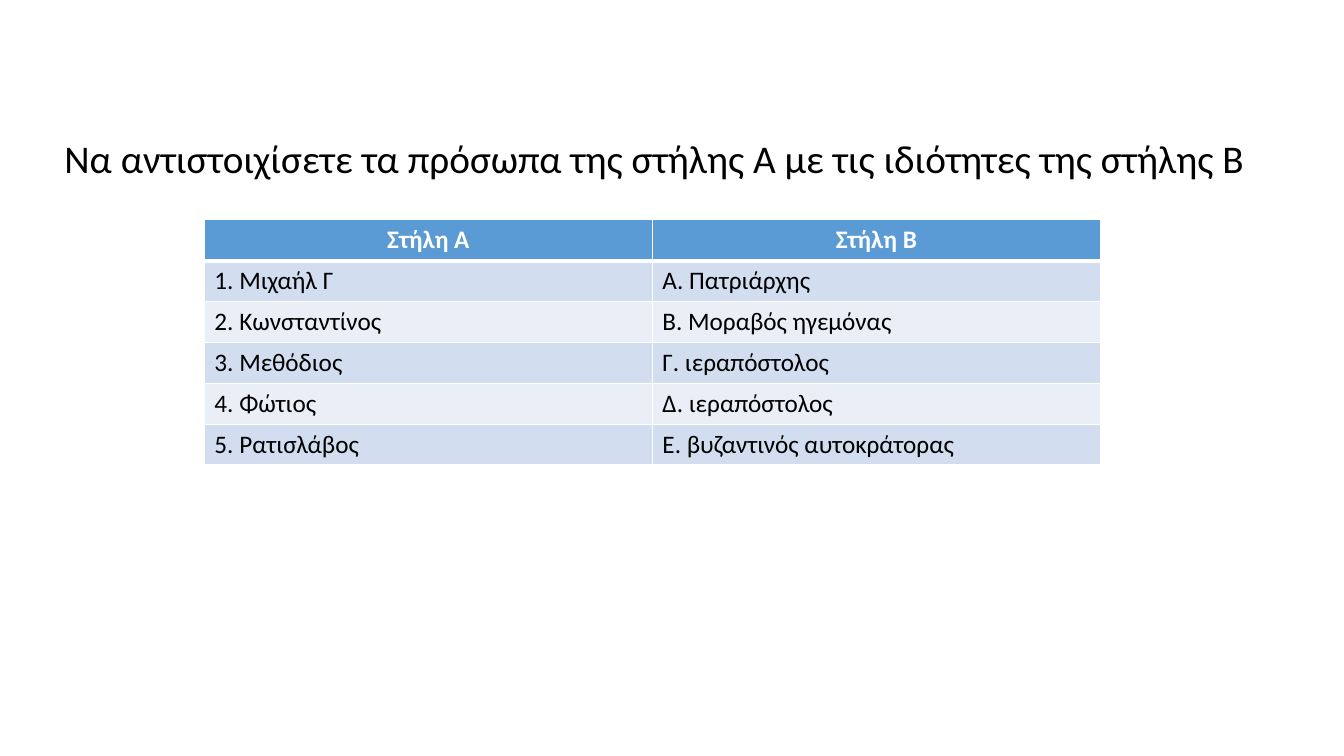
import pptx
import pptx.util
import pptx.oxml
import pptx.dml.color
import pptx.enum.text
from dataclasses import dataclass
from lxml import etree

Pt = pptx.util.Pt
Align = pptx.enum.text.PP_ALIGN


@dataclass(frozen=True)
class Theme:
    face: str = "Calibri"
    ink: str = "000000"
    white: str = "FFFFFF"
    head: str = "5B9BD5"
    bands: tuple = ("D2DEEF", "EAEFF7")
    task: int = 28
    cell: int = 18
    thin: int = 1
    thick: int = 3


THEME = Theme()
TASK = "Να αντιστοιχίσετε τα πρόσωπα της στήλης Α με τις ιδιότητες της στήλης Β"
ROWS = [
    ("Στήλη Α", "Στήλη Β"),
    ("1. Μιχαήλ Γ", "Α. Πατριάρχης"),
    ("2. Κωνσταντίνος", "Β. Μοραβός ηγεμόνας"),
    ("3. Μεθόδιος", "Γ. ιεραπόστολος"),
    ("4. Φώτιος", "Δ. ιεραπόστολος"),
    ("5. Ρατισλάβος", "Ε. βυζαντινός αυτοκράτορας"),
]


def paint(code):
    return pptx.dml.color.RGBColor.from_string(code)


def style(para, size, color, bold=False):
    font = para.font
    font.name = THEME.face
    font.size = Pt(size)
    font.bold = bold
    font.color.rgb = paint(color)


def add_task(slide, text, left, top, width, height):
    frame = slide.shapes.add_textbox(Pt(left), Pt(top), Pt(width), Pt(height)).text_frame
    frame.word_wrap = True
    para = frame.paragraphs[0]
    para.text = text
    para.line_spacing = 0.9
    style(para, THEME.task, THEME.ink)


def add_edge(cell, side, width):
    props = cell._tc.get_or_add_tcPr()
    line = etree.SubElement(props, pptx.oxml.ns.qn(f"a:ln{side}"), w=str(Pt(width)))
    fill = etree.SubElement(line, pptx.oxml.ns.qn("a:solidFill"))
    etree.SubElement(fill, pptx.oxml.ns.qn("a:srgbClr"), val=THEME.white)


def fill_cell(cell, text, row):
    head = row == 0
    edges = {
        "L": THEME.thin,
        "R": THEME.thin,
        "T": THEME.thick if row == 1 else THEME.thin,
        "B": THEME.thick if head else THEME.thin,
    }
    for side, width in edges.items():
        add_edge(cell, side, width)
    cell.fill.solid()
    cell.fill.fore_color.rgb = paint(THEME.head if head else THEME.bands[(row - 1) % 2])
    para = cell.text_frame.paragraphs[0]
    para.text = text
    para.alignment = Align.CENTER if head else Align.LEFT
    style(para, THEME.cell, THEME.white if head else THEME.ink, head)


def add_grid(slide, rows, left, top, width, height):
    shape = slide.shapes.add_table(
        len(rows), len(rows[0]), Pt(left), Pt(top), Pt(width), Pt(height)
    )
    for row, texts in enumerate(rows):
        for col, text in enumerate(texts):
            fill_cell(shape.table.cell(row, col), text, row)


def main():
    deck = pptx.Presentation()
    deck.slide_width = Pt(960)
    deck.slide_height = Pt(540)
    slide = deck.slides.add_slide(deck.slide_layouts[6])
    add_task(slide, TASK, 39, 96.5, 892, 416)
    add_grid(slide, ROWS, 146, 157, 640, 175.2)
    deck.save("out.pptx")


if __name__ == "__main__":
    main()
